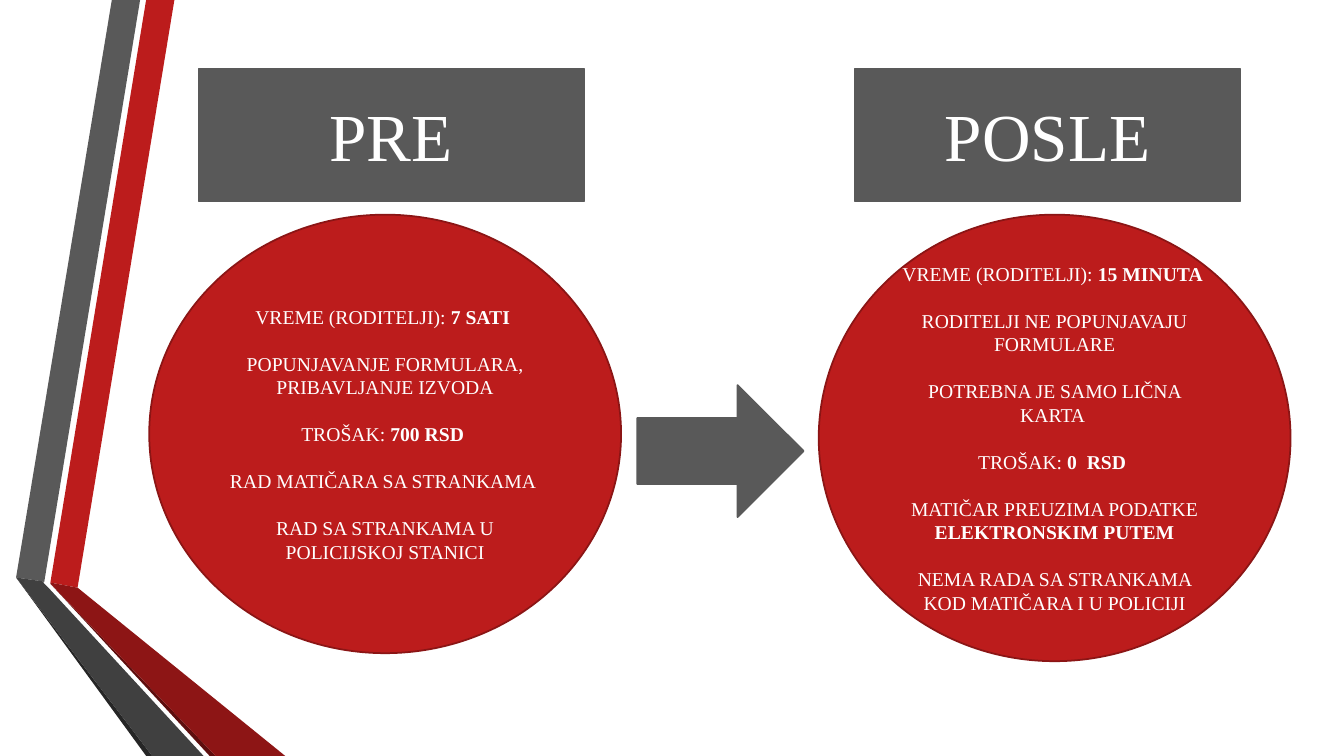
from pptx import Presentation
from pptx.dml.color import RGBColor
from pptx.enum.shapes import MSO_SHAPE
from pptx.enum.text import MSO_ANCHOR, PP_ALIGN
from pptx.util import Pt

PX = 9144
WHITE = RGBColor(0xFF, 0xFF, 0xFF)
RED = RGBColor(0xBC, 0x1C, 0x1C)
RED_EDGE = RGBColor(0x8B, 0x15, 0x15)
RED_DARK = RGBColor(0x8D, 0x15, 0x15)
RED_DEEP = RGBColor(0x5E, 0x0E, 0x0E)
GREY = RGBColor(0x59, 0x59, 0x59)
GREY_DARK = RGBColor(0x40, 0x40, 0x40)
GREY_DEEP = RGBColor(0x26, 0x26, 0x26)

RECTANGLE = MSO_SHAPE.RECTANGLE
OVAL = MSO_SHAPE.OVAL
RIGHT_ARROW = MSO_SHAPE.RIGHT_ARROW
MIDDLE = MSO_ANCHOR.MIDDLE
CENTER = PP_ALIGN.CENTER

RIBBONS = [
    (RED, [(50, 578), (77, 583), (173, 0), (145, 0)]),
    (GREY, [(139, 0), (111, 0), (16, 573), (44, 577)]),
    (GREY_DEEP, [(16, 573), (145, 750), (151, 750)]),
    (RED_DEEP, [(50, 579), (208, 750), (214, 750)]),
    (RED_DARK, [(50, 579), (214, 750), (283, 750), (77, 583), (50, 578)]),
    (GREY_DARK, [(202, 750), (48, 583), (43, 578), (44, 577), (16, 573), (151, 750)]),
]

BEFORE = [
    "VREME (RODITELJI): *7 SATI ",
    "POPUNJAVANJE FORMULARA, PRIBAVLJANJE IZVODA",
    "TROŠAK: *700 RSD ",
    "RAD MATIČARA SA STRANKAMA ",
    "RAD SA STRANKAMA U POLICIJSKOJ STANICI",
]
AFTER = [
    "VREME (RODITELJI): *15 MINUTA ",
    "RODITELJI NE POPUNJAVAJU FORMULARE",
    "POTREBNA JE SAMO LIČNA KARTA ",
    "TROŠAK: *0  RSD ",
    "MATIČAR PREUZIMA PODATKE *ELEKTRONSKIM PUTEM",
    "NEMA RADA SA STRANKAMA KOD MATIČARA I U POLICIJI",
]


def write_text(shape, lines, *, size, font="Times New Roman", color=WHITE, gap=0):
    """Fill a shape with centred paragraphs; text after an asterisk is bold."""
    frame = shape.text_frame
    frame.word_wrap = True
    frame.vertical_anchor = MIDDLE
    for index, line in enumerate(lines):
        para = frame.add_paragraph() if index else frame.paragraphs[0]
        para.alignment = CENTER
        para.space_before = Pt(gap if index else 0)
        for order, part in enumerate(line.split("*")):
            span = para.add_run()
            span.text = part
            span.font.name = font
            span.font.size = Pt(size)
            span.font.bold = order == 1
            span.font.color.rgb = color


class SlideBuilder:
    """Draws styled elements on one slide, with lengths in px."""

    def __init__(self, deck):
        self.shapes = deck.slides.add_slide(deck.slide_layouts[6]).shapes

    def paint(self, shape, fill, line=None):
        """Set a flat fill and an optional outline."""
        shape.shadow.inherit = False
        shape.fill.solid()
        shape.fill.fore_color.rgb = fill
        if line is None:
            shape.line.fill.background()
        else:
            shape.line.color.rgb = line
            shape.line.width = Pt(1.25)

    def ribbon(self, fill, points):
        """Draw a closed polygon without an outline."""
        builder = self.shapes.build_freeform(*points[0], scale=PX)
        builder.add_line_segments(points[1:], close=True)
        self.paint(builder.convert_to_shape(), fill)

    def preset(self, kind, left, top, width, height, fill, line):
        """Draw a preset shape and return it."""
        shape = self.shapes.add_shape(kind, *(n * PX for n in (left, top, width, height)))
        self.paint(shape, fill, line)
        return shape

    def heading(self, left, text):
        """Draw a grey title box."""
        box = self.preset(RECTANGLE, left, 68, 382, 132, GREY, GREY)
        write_text(box, [text], size=48)

    def circle(self, left, height, lines):
        """Draw a red oval with a list of facts."""
        oval = self.preset(OVAL, left, 213, 468, height, RED, RED_EDGE)
        write_text(oval, lines, size=14, gap=16.8)

    def arrow(self, left, top, width, height):
        """Draw a grey block arrow."""
        self.preset(RIGHT_ARROW, left, top, width, height, GREY, GREY)


def main():
    """Build and save the deck."""
    deck = Presentation()
    deck.slide_width, deck.slide_height = 1333 * PX, 750 * PX
    page = SlideBuilder(deck)
    for fill, points in RIBBONS:
        page.ribbon(fill, points)
    page.circle(148, 435, BEFORE)
    page.arrow(632, 382, 165, 131)
    page.circle(812, 443, AFTER)
    page.heading(197, "PRE")
    page.heading(848, "POSLE")
    deck.save("out.pptx")


if __name__ == "__main__":
    main()
